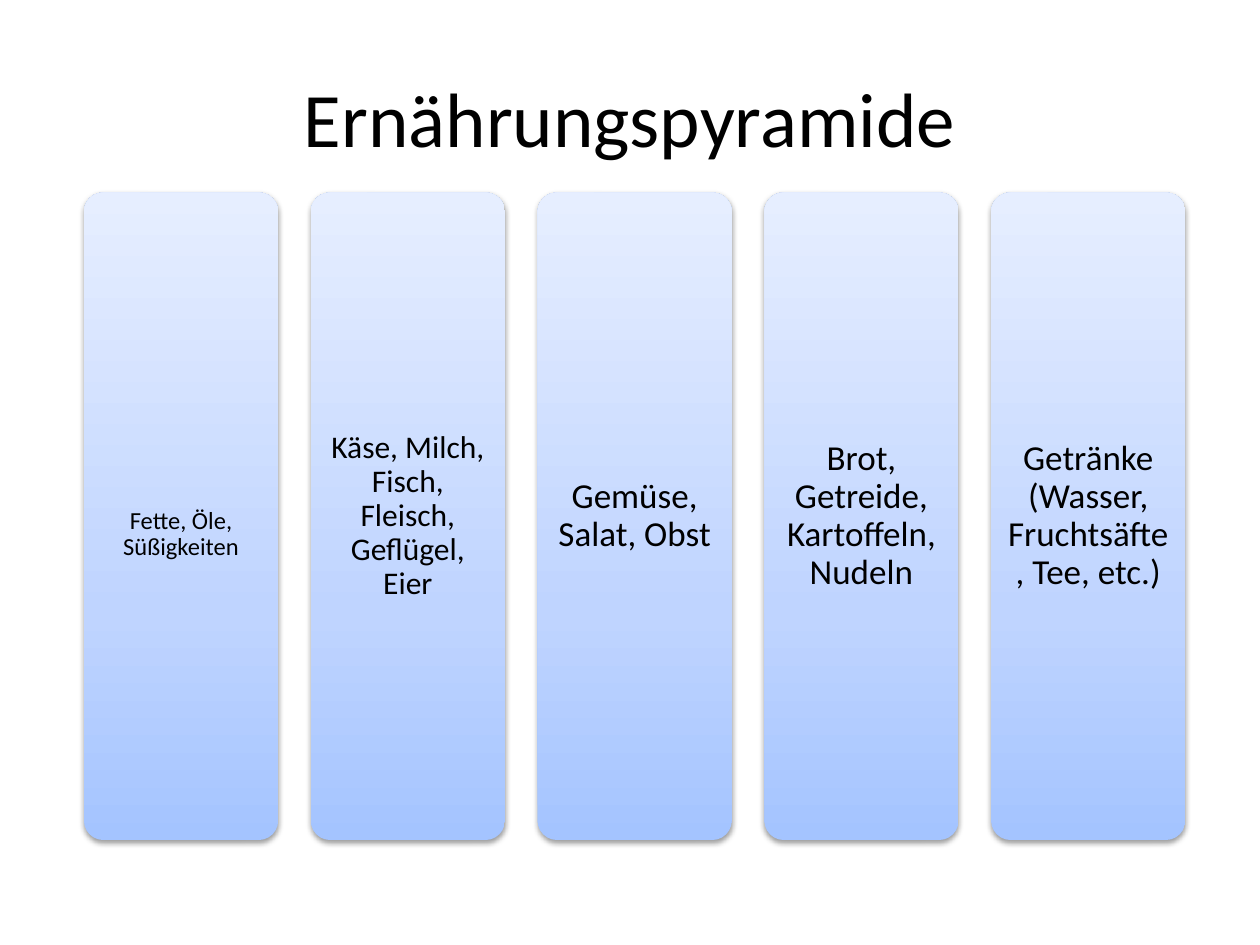
from copy import deepcopy

from lxml.etree import SubElement
from pptx import Presentation
from pptx.dml.color import RGBColor
from pptx.enum.shapes import MSO_SHAPE as Shape
from pptx.enum.text import MSO_ANCHOR as Anchor, PP_ALIGN as Align
from pptx.oxml.ns import qn
from pptx.util import Pt


def color(value):
    return RGBColor.from_string(value)


class Deck:
    font = "Calibri"
    ink = "000000"
    gradient = [(0, "A4C4FF"), (0.35, "BFD4FF"), (1, "E6EEFF")]

    def __init__(self, slide):
        self.s = slide

    def set_text(self, shape, text, size, inset_x, inset_y, extra_top=0):
        tf = shape.text_frame
        tf.word_wrap = True
        tf.vertical_anchor = Anchor.MIDDLE
        tf.margin_left = tf.margin_right = Pt(inset_x)
        tf.margin_top, tf.margin_bottom = Pt(inset_y + extra_top), Pt(inset_y)
        tf.text = text
        p = tf.paragraphs[0]
        p.alignment = Align.CENTER
        f = p.runs[0].font
        f.name, f.size, f.color.rgb = self.font, Pt(size), color(self.ink)
        return p

    def title(self, text, x, y, w, h):
        box = self.s.shapes.add_textbox(Pt(x), Pt(y), Pt(w), Pt(h))
        self.set_text(box, text, 44, 7.2, 3.6)

    def card(self, text, size, x, y, w, h, extra_top=0):
        sp = self.s.shapes.add_shape(Shape.ROUNDED_RECTANGLE,
                                     Pt(x), Pt(y), Pt(w), Pt(h))
        sp.adjustments[0] = 0.1
        sp.line.fill.background()
        self.fill_gradient(sp)
        self.drop_shadow(sp)
        inset = 0.3 * size
        p = self.set_text(sp, text, size, inset, inset, extra_top)
        p.line_spacing = 0.9

    def fill_gradient(self, sp):
        sp.fill.gradient()
        sp.fill.gradient_angle = 90
        stop_list = sp._element.spPr.find(".//" + qn("a:gsLst"))
        stop_list.append(deepcopy(stop_list[-1]))
        for stop, (position, value) in zip(sp.fill.gradient_stops, self.gradient):
            stop.position = position
            stop.color.rgb = color(value)

    def drop_shadow(self, sp):
        sp.shadow.inherit = False
        effects = sp._element.spPr.find(qn("a:effectLst"))
        shadow = SubElement(effects, qn("a:outerShdw"), blurRad=str(Pt(3.1)),
                            dist=str(Pt(1.6)), dir="5400000", rotWithShape="0")
        rgb = SubElement(shadow, qn("a:srgbClr"), val="000000")
        SubElement(rgb, qn("a:alpha"), val="38000")


def main():
    prs = Presentation()
    prs.slide_width, prs.slide_height = Pt(720), Pt(540)
    deck = Deck(prs.slides.add_slide(prs.slide_layouts[6]))

    # Title
    deck.title("Ernährungspyramide", 36, 21.6, 648, 90)

    # Food groups: text, size, extra room above the text
    groups = [
        ("Fette, Öle, Süßigkeiten", 14, 21),
        ("Käse, Milch, Fisch, Fleisch, Geflügel, Eier", 18, 0),
        ("Gemüse, Salat, Obst", 20, 0),
        ("Brot, Getreide, Kartoffeln, Nudeln", 20, 0),
        ("Getränke (Wasser, Fruchtsäfte, Tee, etc.)", 20, 0),
    ]
    left, pitch = 48, 129.6
    for i, (text, size, extra_top) in enumerate(groups):
        deck.card(text, size, left + i * pitch, 110, 111, 370, extra_top)

    prs.save("out.pptx")


if __name__ == "__main__":
    main()
